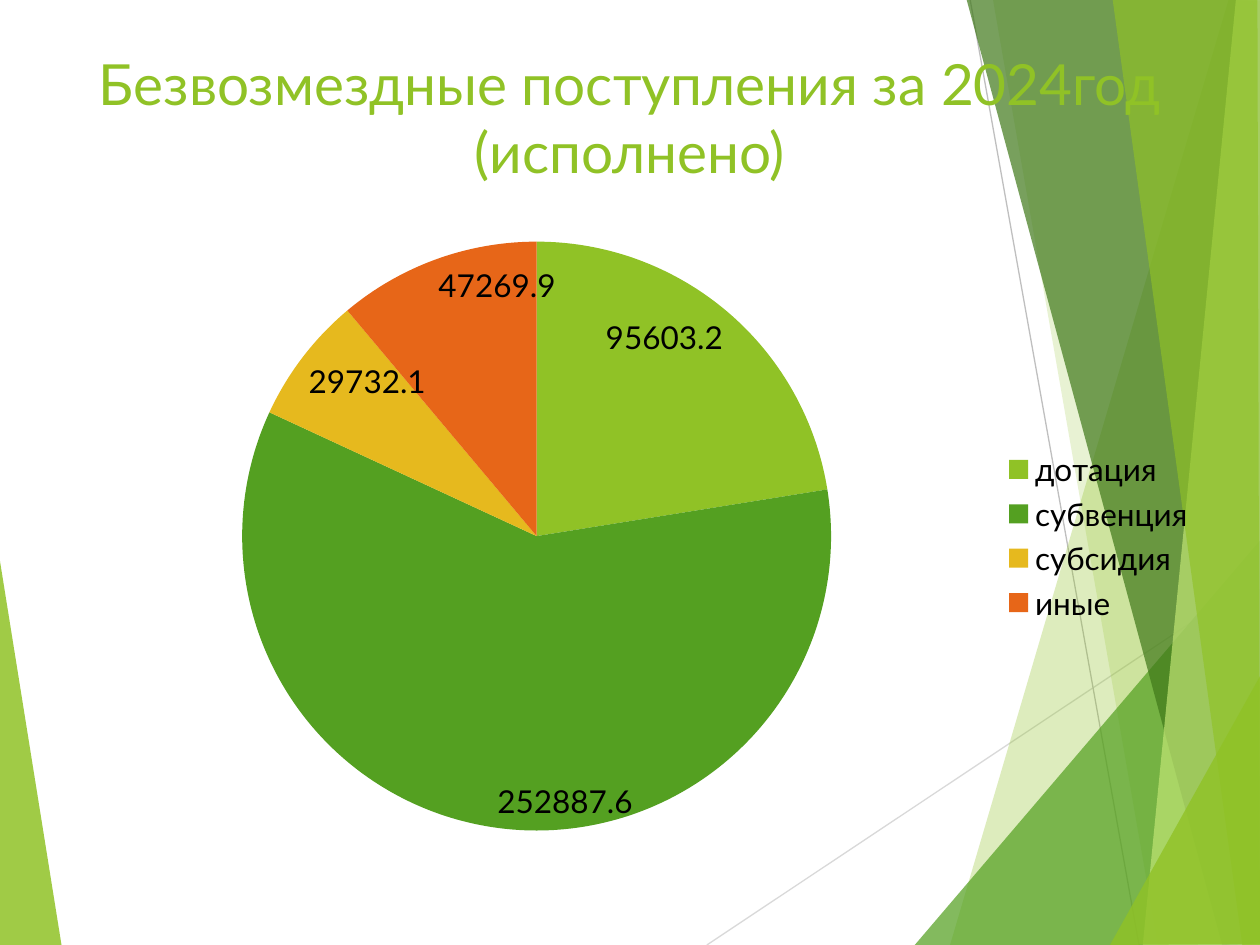
from lxml.etree import SubElement
from pptx import Presentation
from pptx.chart.data import CategoryChartData
from pptx.dml.color import RGBColor
from pptx.enum.chart import XL_CHART_TYPE as ChartType
from pptx.enum.chart import XL_LABEL_POSITION as LabelPosition
from pptx.enum.chart import XL_LEGEND_POSITION as LegendPosition
from pptx.enum.shapes import MSO_CONNECTOR as Connector
from pptx.enum.text import MSO_ANCHOR as Anchor
from pptx.enum.text import PP_ALIGN as Align
from pptx.oxml.ns import qn
from pptx.util import Inches, Pt

FONT = "Lato"
LIME, GREEN, GOLD, ORANGE = "90C226", "54A021", "E6B91E", "E76618"

RAYS = [
    ("D9D9D9", (5.61, 7.5), (10.01, 4.57)),
    ("BFBFBF", (7.7, 0), (9.04, 7.5)),
]
LEFT_FACET = (LIME, 85, [(-0.01, 4.39), (0.49, 7.51), (-0.01, 7.5)])
RIGHT_FACETS = [
    (LIME, 30, [(9.75, 0), (7.54, 7.5), (10.02, 7.51), (10.01, 0.01)]),
    (LIME, 20, [(7.88, -0.01), (9.19, 7.5), (10.01, 7.5), (10.01, -0.01)]),
    (GREEN, 72, [(7.26, 7.5), (10, 4.29), (10.01, 7.5)]),
    ("3F7819", 70, [(7.67, -0.01), (9.7, 7.5), (10.01, 7.49), (10.01, -0.01)]),
    ("C0E474", 70, [(9.81, -0.01), (9.07, 7.5), (10.01, 7.5), (10, -0.01)]),
    (LIME, 65, [(8.83, -0.01), (9.86, 7.5), (10, 7.5), (9.98, -0.01)]),
    (LIME, 80, [(8.81, 7.5), (10.01, 5.35), (10.01, 7.49)]),
]
RECEIPTS = [
    ("дотация", 95603.2, LIME),
    ("субвенция", 252887.6, GREEN),
    ("субсидия", 29732.1, GOLD),
    ("иные", 47269.9, ORANGE),
]


def paint(color_format, color):
    color_format.rgb = RGBColor.from_string(color)


def style_font(font, size, color):
    font.name = FONT
    font.size = Pt(size)
    paint(font.color, color)


def add_facet(slide, color, opacity, corners):
    points = [(Inches(x), Inches(y)) for x, y in corners]
    builder = slide.shapes.build_freeform(*points[0])
    builder.add_line_segments(points[1:], close=True)
    facet = builder.convert_to_shape()
    facet.shadow.inherit = False
    facet.line.fill.background()
    facet.fill.solid()
    paint(facet.fill.fore_color, color)
    color_element = facet._element.spPr.find(qn("a:solidFill"))[0]
    SubElement(color_element, qn("a:alpha"), val=str(opacity * 1000))


def add_ray(slide, color, start, end):
    ends = [Inches(value) for value in start + end]
    ray = slide.shapes.add_connector(Connector.STRAIGHT, *ends)
    ray.line.width = Pt(0.75)
    paint(ray.line.color, color)
    SubElement(ray._element.spPr, qn("a:effectLst"))


def set_title(slide, text):
    title = slide.shapes.title
    slide.shapes._spTree.append(title._element)
    title.left, title.top = Inches(0.5), Inches(0.3)
    title.width, title.height = Inches(9), Inches(1.25)
    frame = title.text_frame
    frame.text = text
    frame.word_wrap = True
    frame.vertical_anchor = Anchor.MIDDLE
    heading = frame.paragraphs[0]
    heading.alignment = Align.CENTER
    style_font(heading.font, 32.4, LIME)


def add_receipts_pie(slide):
    names, amounts, colors = zip(*RECEIPTS)
    data = CategoryChartData()
    data.categories = names
    data.add_series("Series 1", amounts)
    chart = slide.shapes.add_chart(
        ChartType.PIE, Inches(0.59), Inches(1.78), Inches(9), Inches(4.95), data
    ).chart
    style_font(chart.font, 18, "000000")
    chart.has_title = False
    chart.has_legend = True
    chart.legend.position = LegendPosition.RIGHT
    chart.legend.include_in_layout = False

    pie = chart.plots[0]
    pie.vary_by_categories = True
    for index, color in enumerate(colors):
        fill = pie.series[0].points[index].format.fill
        fill.solid()
        paint(fill.fore_color, color)
    pie.has_data_labels = True
    labels = pie.data_labels
    labels.show_value = True
    labels.show_percentage = False
    labels.position = LabelPosition.INSIDE_END
    style_font(labels.font, 18, "000000")


def main():
    deck = Presentation()
    deck.slide_width, deck.slide_height = Inches(10), Inches(7.5)
    slide = deck.slides.add_slide(deck.slide_layouts[5])
    add_facet(slide, *LEFT_FACET)
    for ray in RAYS:
        add_ray(slide, *ray)
    for facet in RIGHT_FACETS:
        add_facet(slide, *facet)
    set_title(slide, "Безвозмездные поступления за 2024год (исполнено)")
    add_receipts_pie(slide)
    deck.save("out.pptx")


if __name__ == "__main__":
    main()
